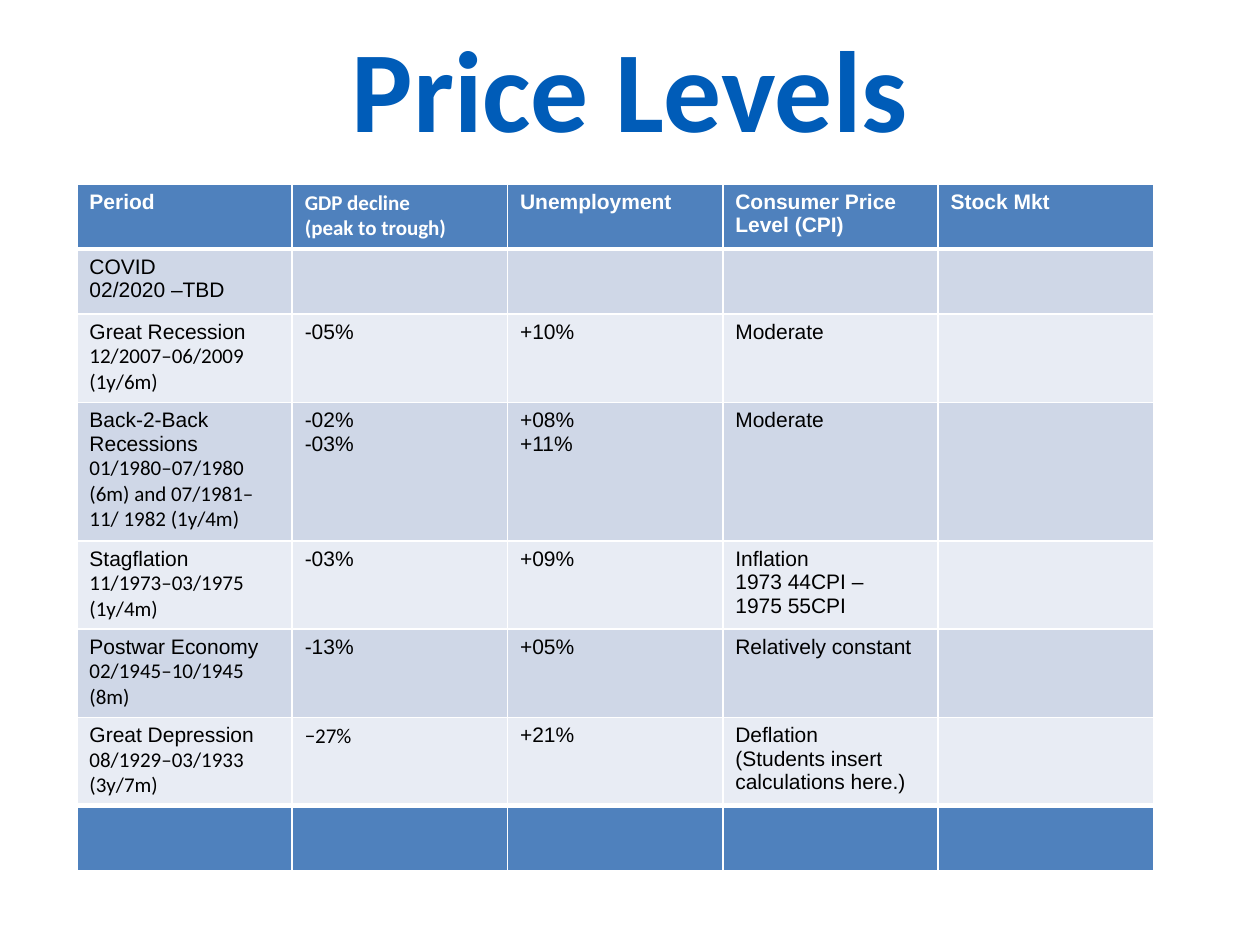
from dataclasses import dataclass

from lxml import etree
from pptx import Presentation
from pptx import util as u
from pptx.dml.color import RGBColor
from pptx.enum import text
from pptx.oxml import ns


@dataclass(frozen=True)
class Theme:
    title: str = "005CB8"
    accent: str = "4F81BD"
    bands: tuple = ("CFD7E7", "E8ECF4")
    ink: str = "000000"
    light: str = "FFFFFF"
    heading_font: str = "Calibri"
    body_font: str = "Arial"
    title_size: int = 66
    body_size: int = 12
    thin: int = 1
    thick: int = 3


class SlideBuilder:
    """Draw styled elements on the current slide; in cells, lines after a bar use the heading font."""

    def __init__(self, slide, theme):
        self.slide = slide
        self.theme = theme

    def style(self, paragraph, color, **formats):
        for name, value in formats.items():
            setattr(paragraph.font, name, value)
        paragraph.font.color.rgb = RGBColor.from_string(color)

    def title(self, wording, left, top, width, height):
        frame = self.slide.shapes.add_textbox(left, top, width, height).text_frame
        for name, value in {"word_wrap": True, "vertical_anchor": text.MSO_ANCHOR.MIDDLE}.items():
            setattr(frame, name, value)
        heading = frame.paragraphs[0]
        for name, value in {"text": wording, "alignment": text.PP_ALIGN.CENTER, "line_spacing": 0.86}.items():
            setattr(heading, name, value)
        self.style(heading, self.theme.title, name=self.theme.heading_font,
                   size=u.Pt(self.theme.title_size), bold=True)

    def borders(self, cell, widths):
        properties = cell._tc.get_or_add_tcPr()
        for side in "LRTB":
            width = u.Pt(widths.get(side, self.theme.thin))
            line = etree.SubElement(properties, ns.qn(f"a:ln{side}"), w=str(width))
            fill = etree.SubElement(line, ns.qn("a:solidFill"))
            etree.SubElement(fill, ns.qn("a:srgbClr"), val=self.theme.light)

    def cell(self, cell, wording, fill, color, bold, widths):
        self.borders(cell, widths)
        cell.fill.solid()
        cell.fill.fore_color.rgb = RGBColor.from_string(fill)
        body, _, detail = wording.partition("|")
        lines = [(line, self.theme.body_font) for line in body.splitlines()]
        lines += [(line, self.theme.heading_font) for line in detail.splitlines()]
        frame = cell.text_frame
        for index, (line, font) in enumerate(lines or [("", self.theme.body_font)]):
            paragraph = frame.add_paragraph() if index else frame.paragraphs[0]
            paragraph.text = line
            self.style(paragraph, color, name=font, size=u.Pt(self.theme.body_size), bold=bold)

    def table(self, rows, left, top, column_width, row_height):
        last, columns = len(rows) - 1, len(rows[0])
        grid = self.slide.shapes.add_table(
            len(rows), columns, left, top, column_width * columns, row_height * len(rows)).table
        edges = {0: {"B": self.theme.thick}, 1: {"T": self.theme.thick},
                 last - 1: {"B": self.theme.thick}, last: {"T": self.theme.thick}}
        for index, row in enumerate(rows):
            framing = index in (0, last)
            fill = self.theme.accent if framing else self.theme.bands[(index - 1) % 2]
            color = self.theme.light if framing else self.theme.ink
            for column, wording in enumerate(row):
                self.cell(grid.cell(index, column), wording, fill, color, framing, edges.get(index, {}))


PERIODS = [
    ("Period", "|GDP decline\n(peak to trough)", "Unemployment", "Consumer Price Level (CPI)", "Stock Mkt"),
    ("COVID\n02/2020 –TBD", "", "", "", ""),
    ("Great Recession|12/2007–06/2009 (1y/6m)", "-05%", "+10%", "Moderate", ""),
    ("Back-2-Back Recessions|01/1980–07/1980 (6m) and 07/1981–11/ 1982 (1y/4m)",
     "-02%\n-03%", "+08%\n+11%", "Moderate", ""),
    ("Stagflation|11/1973–03/1975 (1y/4m)", "-03%", "+09%", "Inflation\n1973 44CPI –\n1975 55CPI", ""),
    ("Postwar Economy|02/1945–10/1945 (8m)", "-13%", "+05%", "Relatively constant", ""),
    ("Great Depression|08/1929–03/1933 (3y/7m)", "|−27%", "+21%",
     "Deflation\n(Students insert calculations here.)", ""),
    ("", "", "", "", ""),
]


def main():
    deck = Presentation()
    deck.slide_width, deck.slide_height = u.Cm(25.4), u.Cm(19.05)
    builder = SlideBuilder(deck.slides.add_slide(deck.slide_layouts[6]), Theme())
    builder.title("Price Levels", u.Cm(1.27), u.Cm(0.36), u.Cm(22.86), u.Cm(3.18))
    builder.table(PERIODS, u.Cm(1.55), u.Cm(3.71), u.Cm(4.34), u.Cm(1.31))
    deck.save("out.pptx")


if __name__ == "__main__":
    main()
